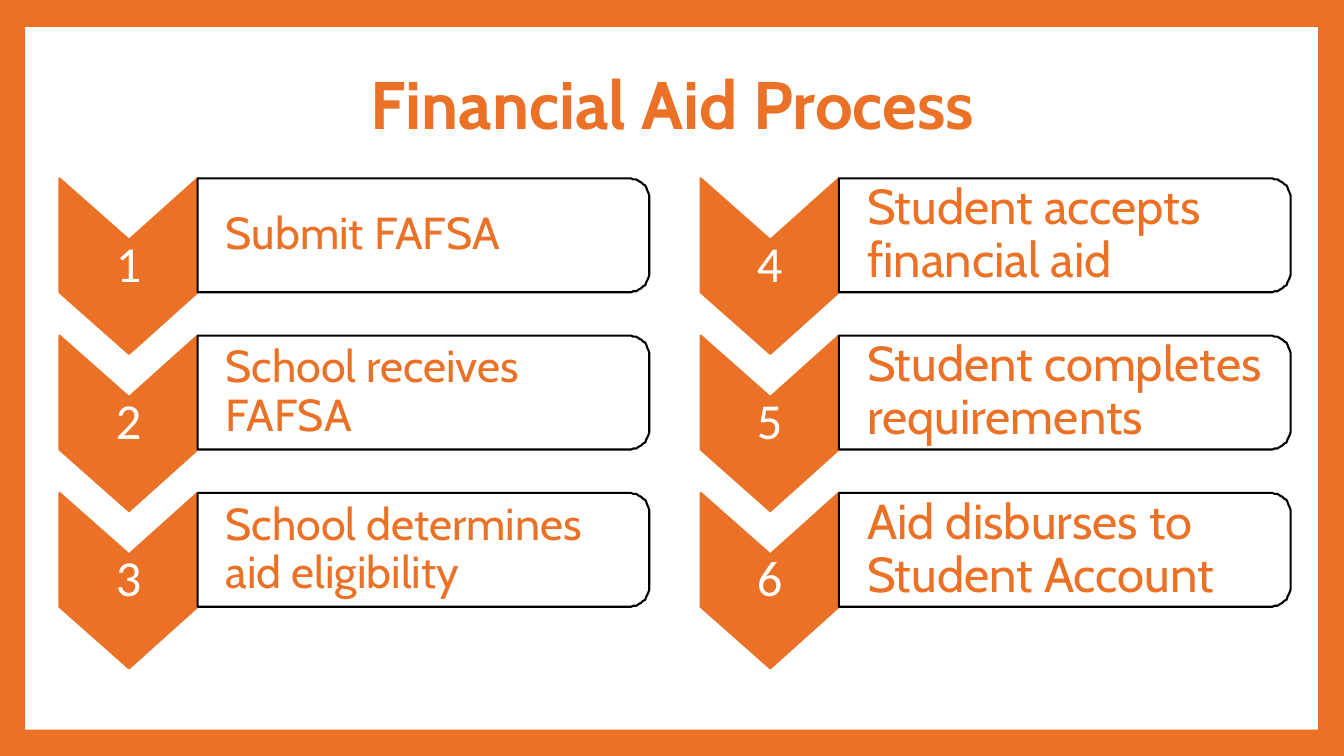
import math
from dataclasses import dataclass

from pptx import Presentation
from pptx import util as u
from pptx.dml.color import RGBColor
from pptx.enum import shapes, text

PX = u.Inches(1) // 100


@dataclass(frozen=True)
class Theme:
    """Colours, fonts and type sizes of the slide."""
    orange: str = "EA7125"
    white: str = "FFFFFF"
    black: str = "000000"
    heading_font: str = "Cabin"
    number_font: str = "Calibri"
    title_size: int = 48
    number_size: int = 36
    line_width: float = 1.5


THEME = Theme()
COLUMNS = [
    (32, ["Submit FAFSA", "School receives FAFSA", "School determines aid eligibility"]),
    (35, ["Student accepts financial aid", "Student completes requirements",
          "Aid disburses to Student Account"]),
]


def paint(sp, fill, line=None):
    """Give a shape its fill and outline, without a shadow."""
    sp.shadow.inherit = False
    sp.fill.solid()
    sp.fill.fore_color.rgb = RGBColor.from_string(fill)
    if line:
        sp.line.color.rgb = RGBColor.from_string(line)
        sp.line.width = u.Pt(THEME.line_width)
    else:
        sp.line.fill.background()


def write(sp, words, size, font, color, align, margins, bold=False):
    """Write one vertically centred paragraph in a shape."""
    tf = sp.text_frame
    tf.word_wrap = True
    tf.vertical_anchor = text.MSO_ANCHOR.MIDDLE
    tf.margin_left, tf.margin_top, tf.margin_right, tf.margin_bottom = (
        m * PX for m in margins)
    p = tf.paragraphs[0]
    p.alignment = align
    p.line_spacing = 0.9
    r = p.add_run()
    r.text = words
    r.font.size = u.Pt(size)
    r.font.name = font
    r.font.bold = bold
    r.font.color.rgb = RGBColor.from_string(color)


def outline(s, points):
    """Draw a closed outline through points given in px."""
    builder = s.shapes.build_freeform(*points[0], scale=PX)
    builder.add_line_segments(points[1:], close=True)
    return builder.convert_to_shape()


def add_frame(s, x, y, w, h):
    """Place the white panel inside the orange background."""
    s.background.fill.solid()
    s.background.fill.fore_color.rgb = RGBColor.from_string(THEME.orange)
    panel = s.shapes.add_shape(shapes.MSO_SHAPE.RECTANGLE, x * PX, y * PX, w * PX, h * PX)
    paint(panel, THEME.white)


def add_title(s, x, y, w, h, words):
    """Place the centred slide title."""
    box = s.shapes.add_textbox(x * PX, y * PX, w * PX, h * PX)
    write(box, words, THEME.title_size, THEME.heading_font, THEME.orange,
          text.PP_ALIGN.CENTER, (10, 5, 10, 5), bold=True)


def add_chevron(s, x, y, w, h, number):
    """Place a downward chevron that holds a step number."""
    right, middle, notch = x + w, x + w / 2, 61
    sp = outline(s, [(right, y), (right, y + h - notch), (middle, y + h),
                     (x, y + h - notch), (x, y), (middle, y + notch)])
    paint(sp, THEME.orange, THEME.orange)
    write(sp, str(number), THEME.number_size, THEME.number_font, THEME.white,
          text.PP_ALIGN.CENTER, (3, 72, 3, 72))


def add_label(s, x, y, w, h, words, size):
    """Place a step label whose right-hand corners are round."""
    rx, ry, steps = 21, 19, 12
    angles = [math.pi / 2 * i / steps for i in range(steps + 1)]
    top = [(x + w - rx + rx * math.sin(a), y + ry - ry * math.cos(a)) for a in angles]
    bottom = [(px, 2 * y + h - py) for px, py in reversed(top)]
    sp = outline(s, [(x, y), *top, *bottom, (x, y + h)])
    paint(sp, THEME.white, THEME.black)
    write(sp, words, size, THEME.heading_font, THEME.orange,
          text.PP_ALIGN.LEFT, (28, 9, 9, 9))


def add_steps(s, x, y, w, row_pitch, first, steps, size):
    """Stack numbered steps in one column."""
    chevron_w = 137
    for i, words in enumerate(steps):
        top = y + i * row_pitch
        add_chevron(s, x, top, chevron_w, 174, first + i)
        add_label(s, x + chevron_w, top, w - chevron_w, 113, words, size)


def build_process_slide(prs):
    """Build the financial aid process slide."""
    s = prs.slides.add_slide(prs.slide_layouts[6])
    add_frame(s, 25, 27, 1282, 697)
    first = 1
    for i, (size, steps) in enumerate(COLUMNS):
        add_steps(s, 59 + i * 636, 177, 585, 156, first, steps, size)
        first += len(steps)
    add_title(s, 127, 57, 1080, 99, "Financial Aid Process")


def main():
    """Create and save the presentation."""
    prs = Presentation()
    prs.slide_width, prs.slide_height = 1333 * PX, 750 * PX
    build_process_slide(prs)
    prs.save("out.pptx")


if __name__ == "__main__":
    main()
